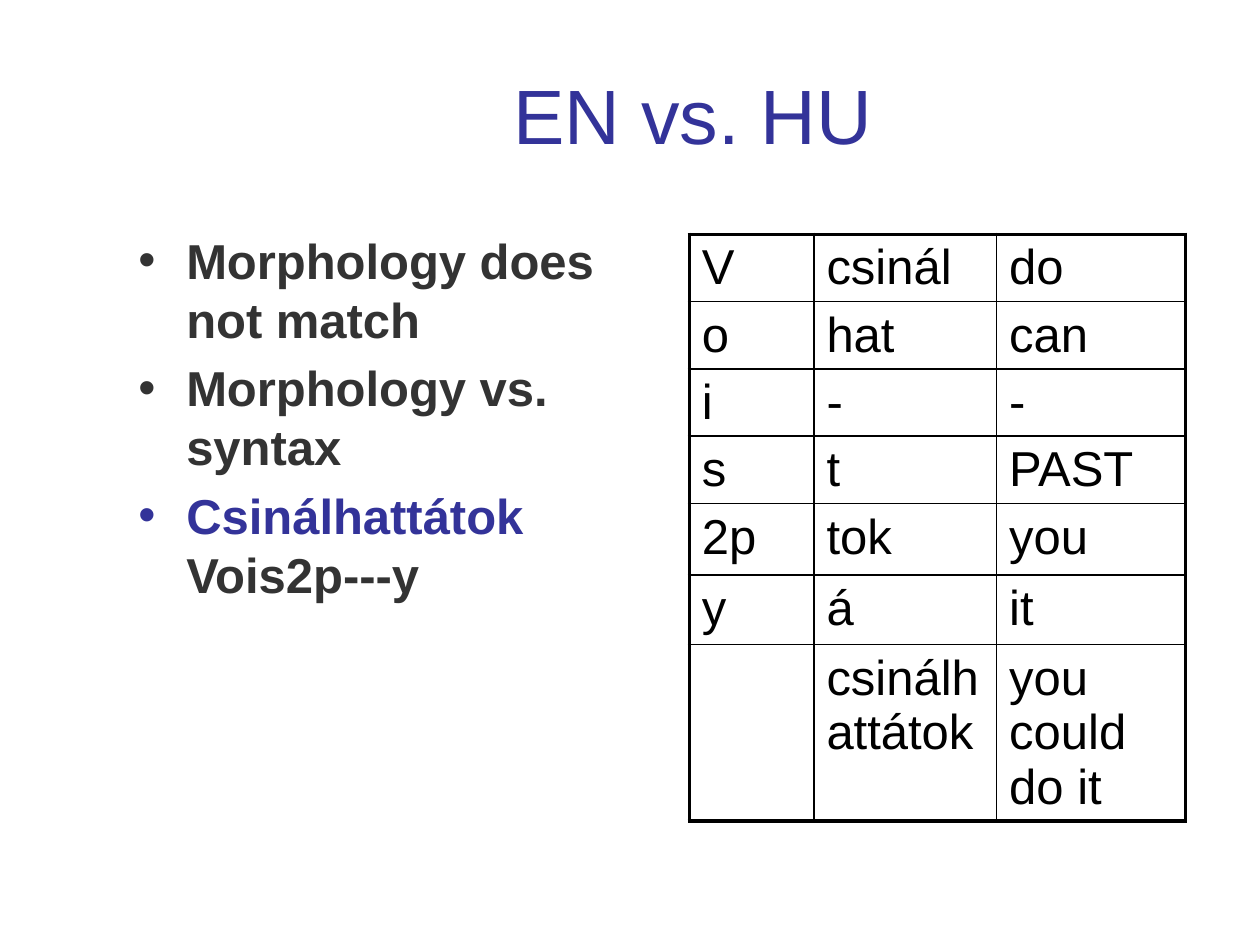
from lxml.etree import SubElement
from pptx import Presentation
from pptx.dml.color import RGBColor
from pptx.enum.text import MSO_ANCHOR, PP_ALIGN
from pptx.oxml.ns import qn
from pptx.util import Inches, Pt

NAVY = RGBColor(0x33, 0x33, 0x99)
GRAY = RGBColor(0x33, 0x33, 0x33)
BLACK = RGBColor(0, 0, 0)
FONT = "Arial"
BODY_SIZE = 28
CELL_LINE_HEIGHT = 31.2
THIN, THICK = 1, 2.25

BULLETS = [
    [("Morphology does not match", GRAY)],
    [("Morphology vs. syntax", GRAY)],
    [("Csinálhattátok", NAVY), (" Vois2p---y", GRAY)],
]
MORPHEMES = [
    ("V", "csinál", "do"),
    ("o", "hat", "can"),
    ("i", "-", "-"),
    ("s", "t", "PAST"),
    ("2p", "tok", "you"),
    ("y", "á", "it"),
    ("", "csinálhattátok", "you could do it"),
]
COLUMN_WIDTHS = [0.99, 1.45, 1.5]
ROW_HEIGHTS = [0.53, 0.53, 0.53, 0.53, 0.57, 0.55, 1.4]


def add_run(paragraph, text, color, size=BODY_SIZE, bold=False):
    run = paragraph.add_run()
    run.text = text
    run.font.name = FONT
    run.font.size = Pt(size)
    run.font.bold = bold
    run.font.color.rgb = color


def add_text_frame(slide, left, top, width, height):
    box = slide.shapes.add_textbox(
        Inches(left), Inches(top), Inches(width), Inches(height)
    )
    box.text_frame.word_wrap = True
    return box.text_frame


def add_title(slide, text):
    frame = add_text_frame(slide, 1, 0.28, 9, 1.25)
    frame.vertical_anchor = MSO_ANCHOR.MIDDLE
    paragraph = frame.paragraphs[0]
    paragraph.alignment = PP_ALIGN.CENTER
    add_run(paragraph, text, NAVY, size=44)


def set_bullet(paragraph):
    properties = paragraph._p.get_or_add_pPr()
    properties.set("marL", str(Inches(0.38)))
    properties.set("indent", str(-Inches(0.38)))
    SubElement(properties, qn("a:buFont"), typeface=FONT)
    SubElement(properties, qn("a:buChar"), char="•")


def add_bullets(slide, items):
    frame = add_text_frame(slide, 1, 1.78, 4.42, 4.95)
    for index, parts in enumerate(items):
        paragraph = frame.add_paragraph() if index else frame.paragraphs[0]
        set_bullet(paragraph)
        if index:
            paragraph.space_before = Pt(0.2 * BODY_SIZE)
        for text, color in parts:
            add_run(paragraph, text, color, bold=True)


def set_borders(cell, widths):
    properties = cell._tc.get_or_add_tcPr()
    for side, width in widths.items():
        line = SubElement(properties, qn(f"a:ln{side}"), w=str(Pt(width)))
        fill = SubElement(line, qn("a:solidFill"))
        SubElement(fill, qn("a:srgbClr"), val=str(BLACK))


def add_morpheme_table(slide, rows):
    last_row, last_column = len(rows) - 1, len(COLUMN_WIDTHS) - 1
    table = slide.shapes.add_table(
        len(rows), len(COLUMN_WIDTHS), Inches(5.47), Inches(1.86),
        Inches(sum(COLUMN_WIDTHS)), Inches(sum(ROW_HEIGHTS)),
    ).table
    table.first_row = False
    table.horz_banding = False
    for column, width in zip(table.columns, COLUMN_WIDTHS):
        column.width = Inches(width)
    for row, height in zip(table.rows, ROW_HEIGHTS):
        row.height = Inches(height)
    for row_index, texts in enumerate(rows):
        for column_index, text in enumerate(texts):
            cell = table.cell(row_index, column_index)
            set_borders(cell, {
                "L": THICK if column_index == 0 else THIN,
                "R": THICK if column_index == last_column else THIN,
                "T": THICK if row_index == 0 else THIN,
                "B": THICK if row_index == last_row else THIN,
            })
            cell.fill.background()
            if text:
                paragraph = cell.text_frame.paragraphs[0]
                paragraph.line_spacing = Pt(CELL_LINE_HEIGHT)
                add_run(paragraph, text, BLACK)


def main():
    presentation = Presentation()
    presentation.slide_width = Inches(10)
    presentation.slide_height = Inches(7.5)
    slide = presentation.slides.add_slide(presentation.slide_layouts[6])
    add_title(slide, "EN vs. HU")
    add_bullets(slide, BULLETS)
    add_morpheme_table(slide, MORPHEMES)
    presentation.save("out.pptx")


if __name__ == "__main__":
    main()
